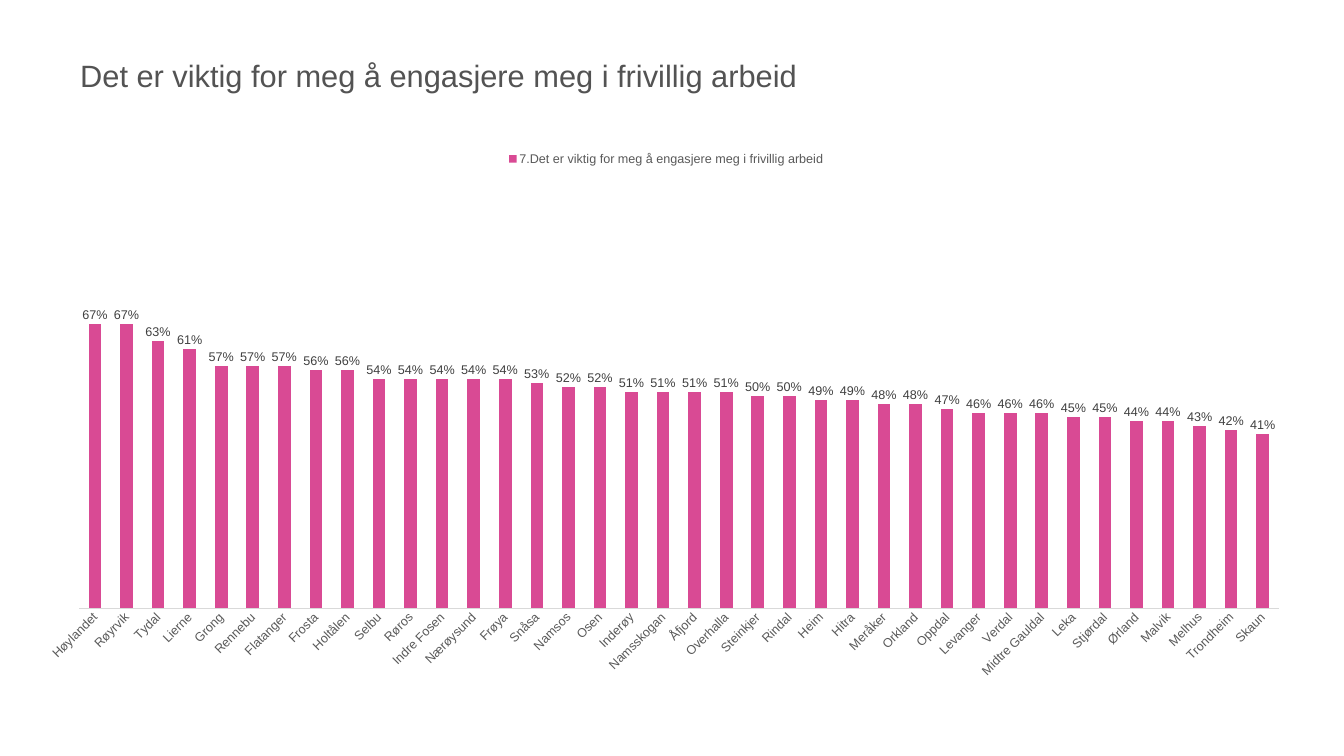
from lxml import etree
from pptx import Presentation
from pptx.chart.data import CategoryChartData
from pptx.dml.color import RGBColor
from pptx.enum.chart import (XL_CHART_TYPE, XL_LABEL_POSITION as LabelPos,
                             XL_LEGEND_POSITION as LegendPos, XL_TICK_MARK as Tick)
from pptx.enum.text import MSO_ANCHOR, MSO_AUTO_SIZE, PP_ALIGN
from pptx.oxml.ns import qn
from pptx.util import Cm, Pt

TITLE = "Det er viktig for meg å engasjere meg i frivillig arbeid"
QUESTION = "7." + TITLE
SHARES = [  # municipality, per cent agreeing
    ("Høylandet", 67), ("Røyrvik", 67), ("Tydal", 63), ("Lierne", 61),
    ("Grong", 57), ("Rennebu", 57), ("Flatanger", 57), ("Frosta", 56),
    ("Holtålen", 56), ("Selbu", 54), ("Røros", 54), ("Indre Fosen", 54),
    ("Nærøysund", 54), ("Frøya", 54), ("Snåsa", 53), ("Namsos", 52),
    ("Osen", 52), ("Inderøy", 51), ("Namsskogan", 51), ("Åfjord", 51),
    ("Overhalla", 51), ("Steinkjer", 50), ("Rindal", 50), ("Heim", 49),
    ("Hitra", 49), ("Meråker", 48), ("Orkland", 48), ("Oppdal", 47),
    ("Levanger", 46), ("Verdal", 46), ("Midtre Gauldal", 46), ("Leka", 45),
    ("Stjørdal", 45), ("Ørland", 44), ("Malvik", 44), ("Melhus", 43),
    ("Trondheim", 42), ("Skaun", 41),
]
PLOT_AREA = {"x": 0.04, "y": 0.07, "w": 0.94, "h": 0.78}  # shares of the chart


def color(hex_code):
    return RGBColor.from_string(hex_code)


def set_format(target, values):
    for name, value in values.items():
        setattr(target, name, value)


def set_font(font, size, hex_code):
    set_format(font, {"name": "Arial", "size": Pt(size), "bold": False})
    font.color.rgb = color(hex_code)


def place(item, left, top, width, height):
    set_format(item, {"left": Cm(left), "top": Cm(top),
                      "width": Cm(width), "height": Cm(height)})


def fix_plot_area(chart):
    """Pin the inner plot area so that the bars keep their place."""
    plot_area = chart.element.find(".//" + qn("c:plotArea"))
    for old in plot_area.findall(qn("c:layout")):
        plot_area.remove(old)
    layout = etree.Element(qn("c:layout"))
    manual = etree.SubElement(layout, qn("c:manualLayout"))
    settings = {"layoutTarget": "inner", "xMode": "edge", "yMode": "edge", **PLOT_AREA}
    for tag, value in settings.items():
        etree.SubElement(manual, qn("c:" + tag)).set("val", str(value))
    plot_area.insert(0, layout)


def add_title(slide):
    title = slide.shapes.title
    place(title, 3.89, 1.19, 62.43, 5.18)
    frame = title.text_frame
    frame.text = TITLE
    set_format(frame, {"vertical_anchor": MSO_ANCHOR.MIDDLE, "word_wrap": True,
                       "auto_size": MSO_AUTO_SIZE.NONE})
    set_format(frame, {"margin_" + side: Cm(0.15)
                       for side in ("left", "top", "right", "bottom")})
    heading = frame.paragraphs[0]
    heading.alignment = PP_ALIGN.LEFT
    set_font(heading.runs[0].font, 44, "535353")


def add_share_chart(slide):
    data = CategoryChartData(number_format="0%")
    data.categories = [municipality for municipality, _ in SHARES]
    data.add_series(QUESTION, [percent / 100 for _, percent in SHARES])
    chart = slide.shapes.add_chart(XL_CHART_TYPE.COLUMN_CLUSTERED, Cm(1.42), Cm(7.34),
                                   Cm(64.31), Cm(27.43), data).chart
    set_font(chart.font, 18, "000000")
    set_format(chart, {"has_title": False, "has_legend": True})
    set_format(chart.legend, {"position": LegendPos.TOP, "include_in_layout": False})
    set_font(chart.legend.font, 18, "595959")

    set_format(chart.value_axis, {"minimum_scale": 0, "maximum_scale": 1,
                                  "has_major_gridlines": False, "visible": False})
    municipalities = chart.category_axis
    set_format(municipalities, {"major_tick_mark": Tick.NONE, "minor_tick_mark": Tick.NONE})
    set_font(municipalities.tick_labels.font, 18, "595959")
    municipalities.format.line.color.rgb = color("D9D9D9")
    municipalities.format.line.width = Pt(0.75)
    label_body = municipalities._element.find(qn("c:txPr")).find(qn("a:bodyPr"))
    label_body.set("rot", "-2700000")
    label_body.set("vert", "horz")

    bars = chart.plots[0]
    set_format(bars, {"gap_width": 150, "overlap": -25, "vary_by_categories": False,
                      "has_data_labels": True})
    set_format(bars.data_labels, {"show_value": True, "number_format": "0%",
                                  "number_format_is_linked": False,
                                  "position": LabelPos.OUTSIDE_END})
    set_font(bars.data_labels.font, 18, "404040")
    fill = bars.series[0].format.fill
    fill.solid()
    fill.fore_color.rgb = color("D94A94")
    fix_plot_area(chart)


def main():
    deck = Presentation()
    set_format(deck, {"slide_width": Cm(67.74), "slide_height": Cm(38.1)})
    slide = deck.slides.add_slide(deck.slide_layouts[5])
    add_title(slide)
    add_share_chart(slide)
    deck.save("out.pptx")


if __name__ == "__main__":
    main()
